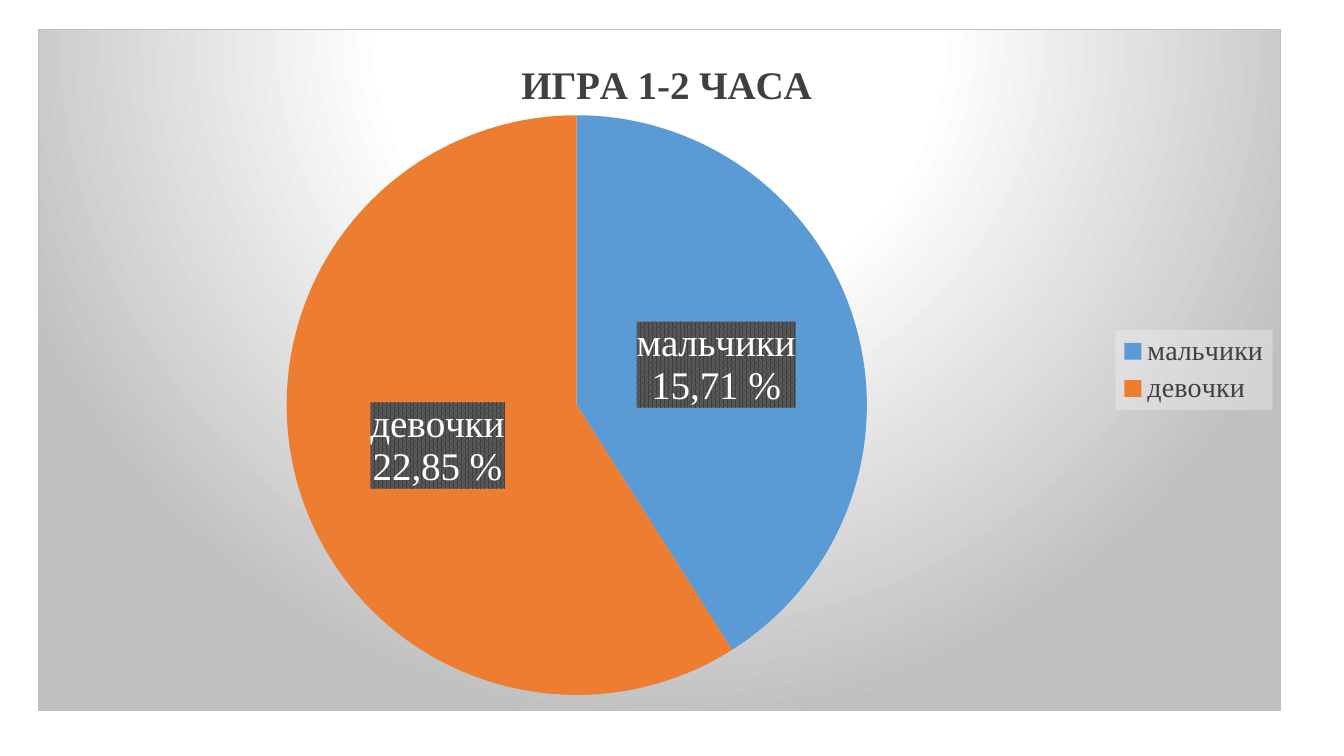
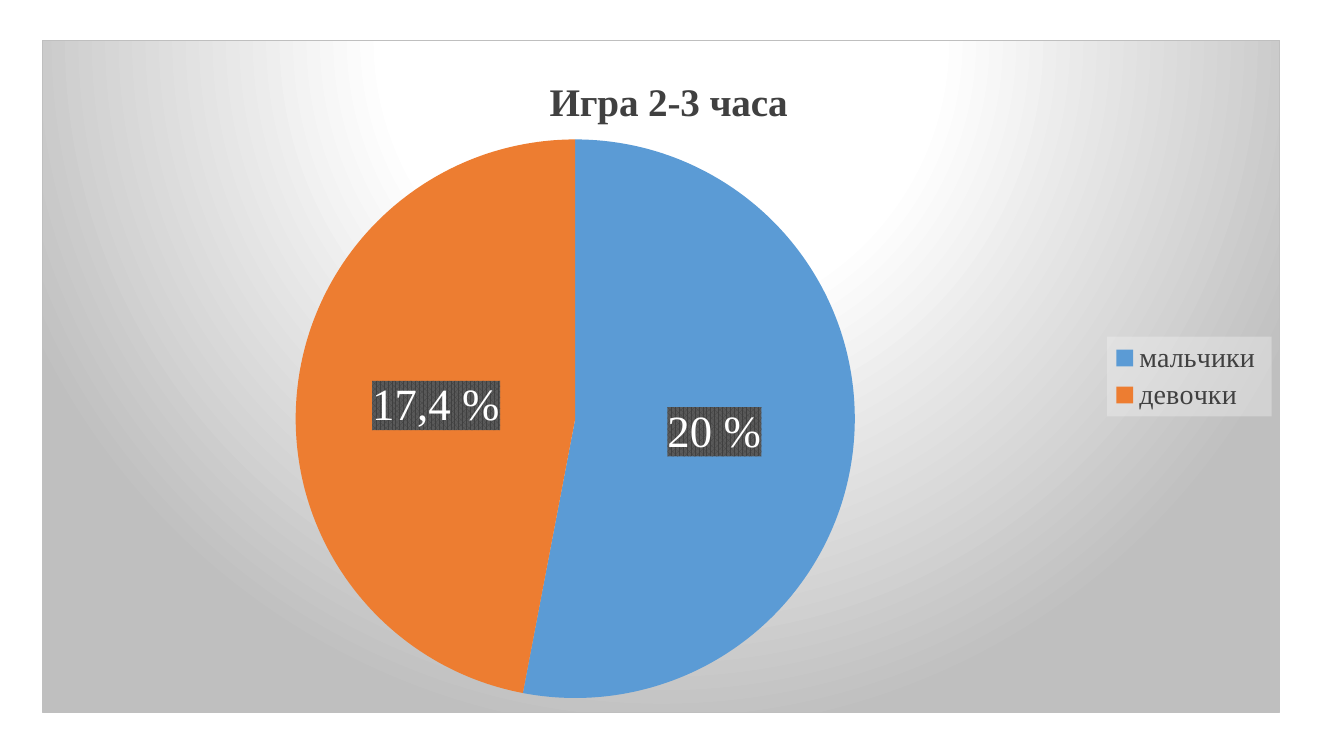
"""Two slides, each with a pie chart of the time boys and girls spend on games."""
from lxml import etree
from pptx import Presentation
from pptx.chart.data import CategoryChartData
from pptx.dml.color import RGBColor
from pptx.enum.chart import XL_CHART_TYPE, XL_LABEL_POSITION, XL_LEGEND_POSITION
from pptx.oxml import parse_xml
from pptx.oxml.ns import qn
from pptx.util import Inches, Pt

PIE = XL_CHART_TYPE.PIE
CENTER = XL_LABEL_POSITION.CENTER
RIGHT = XL_LEGEND_POSITION.RIGHT
BLANK = 6
FACE = "Times New Roman"
COLORS = {
    "boys": "5B9BD5",
    "girls": "ED7D31",
    "text": "404040",
    "label": "FFFFFF",
    "dark": "404040",
    "dim": "595959",
    "legend": "F2F2F2",
    "light": "FFFFFF",
    "edge": "BFBFBF",
    "base": "000000",
}
SPACES = (
    'xmlns:c="http://schemas.openxmlformats.org/drawingml/2006/chart" '
    'xmlns:a="http://schemas.openxmlformats.org/drawingml/2006/main"'
)


def color(name):
    return RGBColor.from_string(COLORS[name])


def solid(name, extra=""):
    return f'<a:srgbClr val="{COLORS[name]}">{extra}</a:srgbClr>'


def style(body):
    return parse_xml(f"<c:spPr {SPACES}>{body}</c:spPr>")


class Deck:
    def __init__(self):
        self.prs = Presentation()
        self.prs.slide_width = Inches(13.33)
        self.prs.slide_height = Inches(7.5)
        self.slide = None

    def add(self):
        self.slide = self.prs.slides.add_slide(self.prs.slide_layouts[BLANK])

    def font(self, font, size, name, bold=False, face=FACE):
        font.name = face
        font.size = Pt(size)
        font.bold = bold
        font.color.rgb = color(name)

    def text(self, frame, words, size, name, bold=False):
        for num, line in enumerate(words.split("\n")):
            para = frame.add_paragraph() if num else frame.paragraphs[0]
            run = para.add_run()
            run.text = line
            self.font(run.font, size, name, bold)

    def place(self, part, box, spot, inner=False):
        left, top, width, height = box
        vals = {"x": (spot[0] - left) / width, "y": (spot[1] - top) / height}
        if len(spot) > 2:
            vals["w"] = spot[2] / width
            vals["h"] = spot[2] / height
        for old in part.findall(qn("c:layout")):
            part.remove(old)
        layout = etree.Element(qn("c:layout"))
        manual = etree.SubElement(layout, qn("c:manualLayout"))
        if inner:
            etree.SubElement(manual, qn("c:layoutTarget")).set("val", "inner")
        for key in "xy":
            etree.SubElement(manual, qn(f"c:{key}Mode")).set("val", "edge")
        for key, val in vals.items():
            etree.SubElement(manual, qn(f"c:{key}")).set("val", f"{val:.4f}")
        text = part.find(qn("c:tx"))
        if text is None:
            part.insert(0, layout)
        else:
            text.addnext(layout)

    def back(self, chart):
        stops = ((0, "light"), (39, "light"), (100, "edge"))
        grad = "".join(
            f'<a:gs pos="{pos * 1000}">{solid(name)}</a:gs>' for pos, name in stops
        )
        chart.element.find(qn("c:chart")).addnext(style(
            f'<a:gradFill><a:gsLst>{grad}</a:gsLst><a:path path="circle">'
            '<a:fillToRect l="50000" t="-80000" r="50000" b="180000"/>'
            f'</a:path></a:gradFill><a:ln w="{Pt(0.75)}">'
            f'<a:solidFill>{solid("edge")}</a:solidFill></a:ln>'
        ))

    def legend(self, chart):
        chart.has_legend = True
        legend = chart.legend
        legend.position = RIGHT
        legend.include_in_layout = False
        self.font(legend.font, 20, "text")
        alpha = '<a:alpha val="39000"/>'
        root = chart.element.find(qn("c:chart")).find(qn("c:legend"))
        root.find(qn("c:overlay")).addnext(style(
            f'<a:solidFill>{solid("legend", alpha)}</a:solidFill>'
        ))

    def label(self, point, words, size):
        label = point.data_label
        self.text(label.text_frame, words, size, "label")
        label.position = CENTER
        rich = label.text_frame.paragraphs[0]._p.getparent()
        rich.getparent().addnext(style(
            f'<a:pattFill prst="pct75"><a:fgClr>{solid("dark")}</a:fgClr>'
            f'<a:bgClr>{solid("dim")}</a:bgClr></a:pattFill>'
        ))

    def pie(self, box, title, spot, disc, series, cats, vals, labels, size):
        data = CategoryChartData()
        data.categories = cats
        data.add_series(series, vals)
        frame = self.slide.shapes.add_chart(PIE, *map(Inches, box), data)
        chart = frame.chart
        self.font(chart.font, 10, "base", face="Calibri")
        self.back(chart)
        chart.has_title = True
        self.text(chart.chart_title.text_frame, title, 28, "text", True)
        root = chart.element.find(qn("c:chart"))
        self.place(root.find(qn("c:title")), box, spot)
        self.legend(chart)
        plot = chart.plots[0]
        plot.vary_by_categories = True
        for num, (name, words) in enumerate(zip(("boys", "girls"), labels)):
            point = plot.series[0].points[num]
            point.format.fill.solid()
            point.format.fill.fore_color.rgb = color(name)
            self.label(point, words, size)
        self.place(root.find(qn("c:plotArea")), box, disc, True)


def main():
    deck = Deck()
    deck.add()
    deck.pie(
        (0.38, 0.29, 12.33, 6.76), "ИГРА 1-2 ЧАСА", (5.1, 0.52),
        (2.84, 1.14, 5.76), "Series 1", ("мальчики", "девочки"), (41, 59),
        ("мальчики\n15,71 %", "девочки\n22,85 %"), 28,
    )
    deck.add()
    deck.pie(
        (0.42, 0.4, 12.28, 6.67), "Игра 2-3 часа", (5.38, 0.69),
        (2.93, 1.38, 5.55), "Игра 2-3 часа", ("мальчики ", "девочки"), (53, 47),
        ("20 %", "17,4 %"), 32,
    )
    deck.prs.save("out.pptx")


if __name__ == "__main__":
    main()
